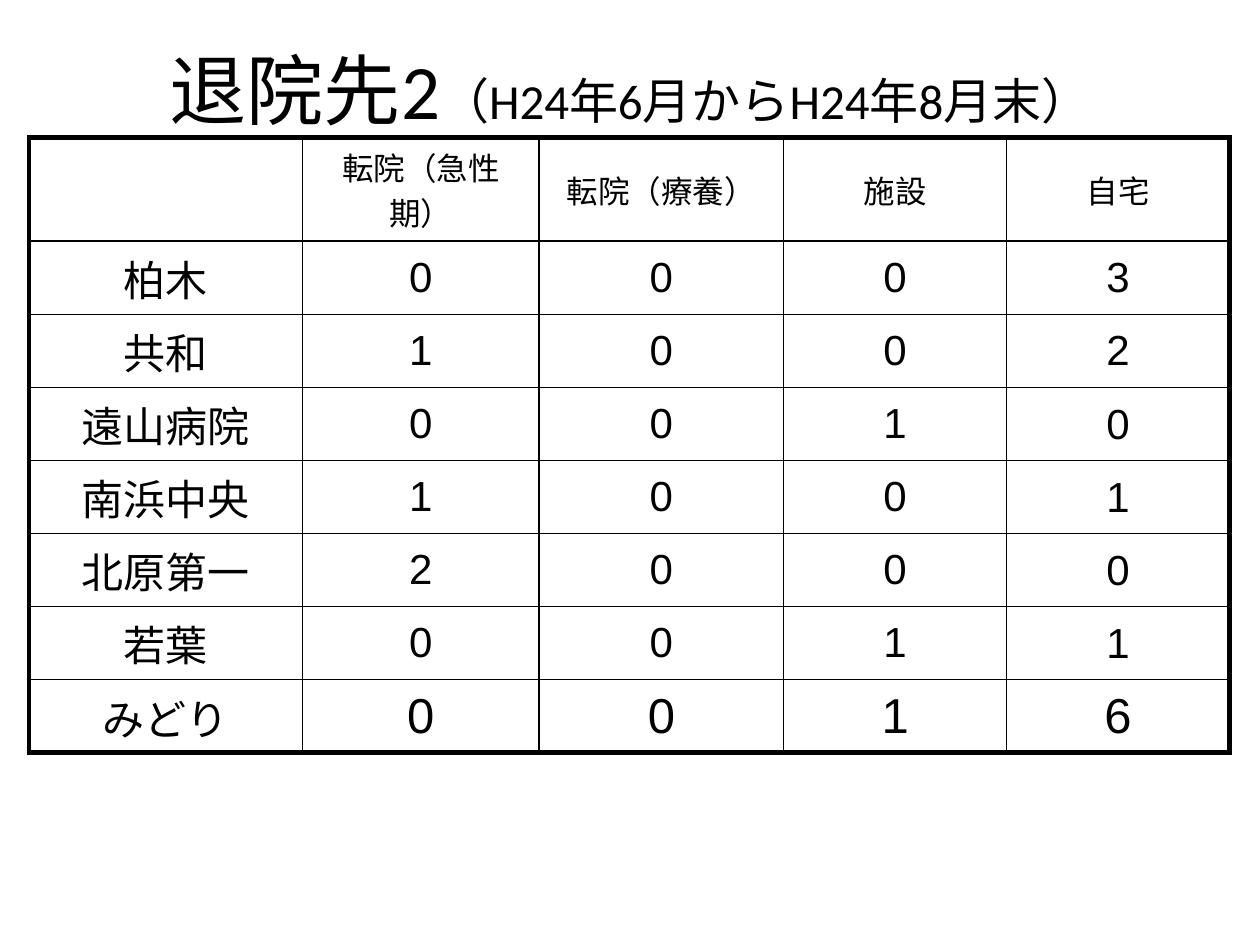
import pptx
import pptx.dml.color
import pptx.enum.text
import pptx.oxml
import pptx.oxml.ns
import pptx.util

Inches, Pt = pptx.util.Inches, pptx.util.Pt
CENTER = pptx.enum.text.PP_ALIGN.CENTER
MIDDLE = pptx.enum.text.MSO_ANCHOR.MIDDLE

THEME = {
    "ink": "000000",
    "title_font": "Calibri", "body_font": "Arial", "name_font": "Noto Sans CJK JP",
    "title": 44, "period": 28, "heading": 18, "body": 24, "last_row": 28,
    "frame": 3, "grid": 1, "space_share": 0.2,
}
INK = pptx.dml.color.RGBColor.from_string(THEME["ink"])

DISCHARGES = [
    ("", "転院（急性期）", "転院（療養）", "施設", "自宅"),
    ("柏木", 0, 0, 0, 3),
    ("共和", 1, 0, 0, 2),
    ("遠山病院", 0, 0, 1, 0),
    ("南浜中央", 1, 0, 0, 1),
    ("北原第一", 2, 0, 0, 0),
    ("若葉", 0, 0, 1, 1),
    ("みどり", 0, 0, 1, 6),
]
COLUMN_WIDTHS = [2.17, 1.88, 1.94, 1.77, 1.77]
HEADING_HEIGHT, ROW_HEIGHT = 0.45, 0.58
LAST_ROW, LAST_COLUMN = len(DISCHARGES) - 1, len(COLUMN_WIDTHS) - 1


def style(font, name, size):
    font.name, font.size, font.bold = name, Pt(size), False
    font.color.rgb = INK


def add_border(cell, side, width):
    cell._tc.get_or_add_tcPr().append(pptx.oxml.parse_xml(
        f'<a:{side} {pptx.oxml.ns.nsdecls("a")} w="{Pt(width)}"><a:solidFill>'
        f'<a:srgbClr val="{THEME["ink"]}"/></a:solidFill></a:{side}>'))


deck = pptx.Presentation()
deck.slide_width, deck.slide_height = Inches(10), Inches(7.5)
slide = deck.slides.add_slide(deck.slide_layouts[5])

title = slide.shapes.title
title.left, title.top = int(deck.slide_width * 0.05), Inches(0.08)
title.width, title.height = int(deck.slide_width * 0.9), Inches(1.25)
title.text_frame.vertical_anchor = MIDDLE
heading = title.text_frame.paragraphs[0]
heading.alignment = CENTER
for wording, size in [("退院先2", THEME["title"]), ("（H24年6月からH24年8月末）", THEME["period"])]:
    part = heading.add_run()
    part.text = wording
    style(part.font, THEME["title_font"], size)

discharges = slide.shapes.add_table(
    len(DISCHARGES), len(COLUMN_WIDTHS), Inches(0.23), Inches(1.09),
    Inches(sum(COLUMN_WIDTHS)), Inches(HEADING_HEIGHT + LAST_ROW * ROW_HEIGHT)).table
discharges.first_row = discharges.horz_banding = False
for column, width in zip(discharges.columns, COLUMN_WIDTHS):
    column.width = Inches(width)

for r, record in enumerate(DISCHARGES):
    discharges.rows[r].height = Inches(ROW_HEIGHT if r else HEADING_HEIGHT)
    for c, value in enumerate(record):
        cell = discharges.cell(r, c)
        cell.vertical_anchor = MIDDLE
        outer_column = c in (0, LAST_COLUMN)
        if r and outer_column:
            cell.margin_left = cell.margin_right = cell.margin_top = Inches(0.01)
            cell.margin_bottom = 0

        size = THEME["heading"] if r == 0 else THEME["body"]
        if r == LAST_ROW and c:
            size = THEME["last_row"]
        entry = cell.text_frame.paragraphs[0]
        entry.text = str(value)
        entry.alignment = CENTER
        if r == 0 or not outer_column:
            entry.space_before = Pt(size * THEME["space_share"])
        style(entry.font, THEME["name_font"] if r and c == 0 else THEME["body_font"], size)

        on_frame = {"lnL": c == 0, "lnR": c == LAST_COLUMN, "lnT": r == 0, "lnB": r == LAST_ROW}
        for side, framed in on_frame.items():
            add_border(cell, side, THEME["frame"] if framed else THEME["grid"])
        cell.fill.background()

deck.save("out.pptx")
